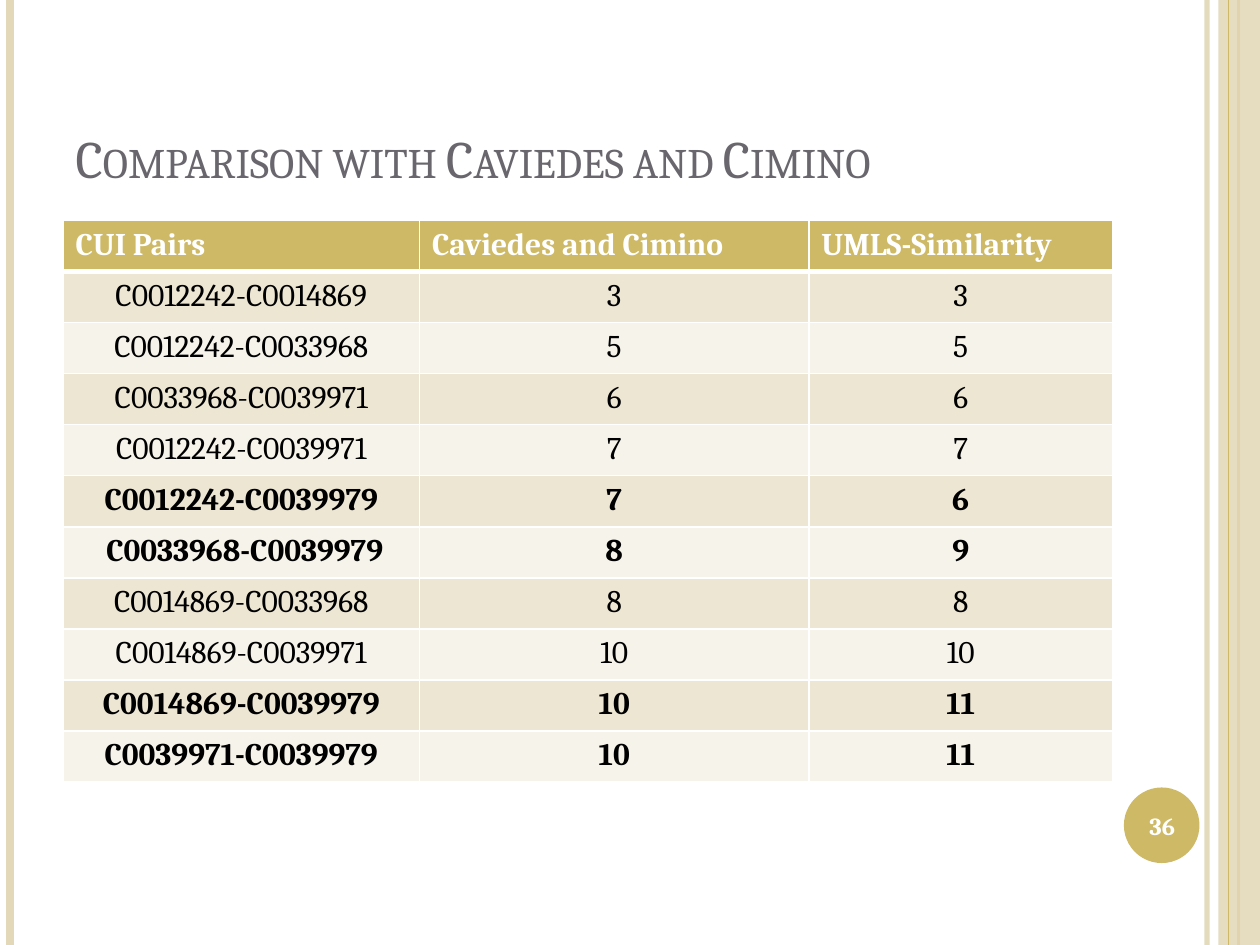
from dataclasses import dataclass

from lxml import etree
from pptx import Presentation
from pptx.dml.color import RGBColor
from pptx.enum.shapes import MSO_CONNECTOR, MSO_SHAPE
from pptx.enum.text import MSO_ANCHOR, MSO_AUTO_SIZE, PP_ALIGN
from pptx.oxml.ns import qn
from pptx.util import Inches, Pt

STRAIGHT = MSO_CONNECTOR.STRAIGHT
RECT, OVAL = MSO_SHAPE.RECTANGLE, MSO_SHAPE.OVAL
LEFT, CENTER = PP_ALIGN.LEFT, PP_ALIGN.CENTER
MIDDLE, BOTTOM = MSO_ANCHOR.MIDDLE, MSO_ANCHOR.BOTTOM

FONT = "Cambria"
GOLD, SAND, GREY, WHITE, BLACK = "CEB966", "E3D9B8", "69676D", "FFFFFF", "000000"
BANDS = ("EDE6D3", "F6F3EA")
SLIDE_H = 7.5


@dataclass
class Rule:
    """Vertical line over the full slide height."""
    x: float
    width: float
    color: str
    opacity: int = 100


@dataclass
class Pair:
    """Path length of a concept pair according to both systems."""
    name: str
    caviedes: int
    umls: int


BACK_RULES = [Rule(9.58, 3, SAND, 93), Rule(0.08, 4.5, SAND), Rule(9.83, 1.5, GOLD)]
FRONT_RULE = Rule(9.75, 0.75, GOLD)
HEADERS = ("CUI Pairs", "Caviedes and Cimino", "UMLS-Similarity")
COL_WIDTHS = (2.83, 3.09, 2.41)
ROW_HEIGHT = 4.46 / 11
PAIRS = [
    Pair("C0012242-C0014869", 3, 3),
    Pair("C0012242-C0033968", 5, 5),
    Pair("C0033968-C0039971", 6, 6),
    Pair("C0012242-C0039971", 7, 7),
    Pair("C0012242-C0039979", 7, 6),
    Pair(" C0033968-C0039979", 8, 9),
    Pair("C0014869-C0033968", 8, 8),
    Pair("C0014869-C0039971", 10, 10),
    Pair("C0014869-C0039979", 10, 11),
    Pair("C0039971-C0039979", 10, 11),
]


def rgb(color: str) -> RGBColor:
    return RGBColor.from_string(color)


def set_opacity(fill, percent: int) -> None:
    """Add an alpha value to a solid fill's colour element."""
    color = fill._xPr.find(qn("a:solidFill"))[0]
    etree.SubElement(color, qn("a:alpha"), val=str(percent * 1000))


def write(tf, text: str, align, **font) -> None:
    p = tf.paragraphs[0]
    p.alignment = align
    r = p.add_run()
    r.text = text
    r.font.color.rgb = rgb(font.pop("color"))
    for name, value in {"name": FONT, **font}.items():
        setattr(r.font, name, value)


def add_rule(s, rule: Rule) -> None:
    line = s.shapes.add_connector(
        STRAIGHT, Inches(rule.x), 0, Inches(rule.x), Inches(SLIDE_H))
    line.line.width = Pt(rule.width)
    line.line.color.rgb = rgb(rule.color)
    if rule.opacity < 100:
        set_opacity(line.line.fill, rule.opacity)
    etree.SubElement(line._element.spPr, qn("a:effectLst"))


def add_block(s, kind, box: tuple, color: str):
    sp = s.shapes.add_shape(kind, *map(Inches, box))
    sp.shadow.inherit = False
    sp.fill.solid()
    sp.fill.fore_color.rgb = rgb(color)
    sp.line.fill.background()
    return sp


def set_borders(cell, bottom: float) -> None:
    """White borders, one point wide except for the bottom one."""
    tc_pr = cell._tc.get_or_add_tcPr()
    widths = {"a:lnL": 1, "a:lnR": 1, "a:lnT": 1, "a:lnB": bottom}
    for i, (tag, width) in enumerate(widths.items()):
        ln = etree.Element(qn(tag), w=str(Pt(width)))
        fill = etree.SubElement(ln, qn("a:solidFill"))
        etree.SubElement(fill, qn("a:srgbClr"), val=WHITE)
        tc_pr.insert(i, ln)


def add_row(table, row: int, values: tuple, fill: str, align,
            bottom: float = 1, **font) -> None:
    table.rows[row].height = Inches(ROW_HEIGHT)
    for col, value in enumerate(values):
        cell = table.cell(row, col)
        cell.fill.solid()
        cell.fill.fore_color.rgb = rgb(fill)
        set_borders(cell, bottom)
        write(cell.text_frame, str(value), align, size=Pt(18), **font)


def main() -> None:
    prs = Presentation()
    prs.slide_width, prs.slide_height = Inches(10), Inches(SLIDE_H)
    s = prs.slides.add_slide(prs.slide_layouts[5])

    # Side decoration
    for rule in BACK_RULES:
        add_rule(s, rule)
    band = add_block(s, RECT, (9.67, 0, 0.33, SLIDE_H), SAND)
    set_opacity(band.fill, 87)
    add_rule(s, FRONT_RULE)
    add_block(s, OVAL, (8.92, 6.25, 0.6, 0.6), GOLD)

    # Title in small caps
    title = s.shapes.title
    box = dict(left=0.5, top=0.3, width=8.17, height=1.25)
    for name, value in box.items():
        setattr(title, name, Inches(value))
    tf = title.text_frame
    tf.auto_size = MSO_AUTO_SIZE.NONE
    tf.vertical_anchor = BOTTOM
    write(tf, "Comparison with Caviedes and Cimino", LEFT, size=Pt(30), color=GREY)
    tf.paragraphs[0].runs[0].font._element.set("cap", "small")

    # Comparison table: pairs on which the systems differ are bold
    table = s.shapes.add_table(
        len(PAIRS) + 1, len(HEADERS), Inches(0.5), Inches(1.75),
        Inches(sum(COL_WIDTHS)), Inches(ROW_HEIGHT * (len(PAIRS) + 1))).table
    for column, width in zip(table.columns, COL_WIDTHS):
        column.width = Inches(width)
    add_row(table, 0, HEADERS, GOLD, LEFT, bottom=3, color=WHITE, bold=True)
    for i, pair in enumerate(PAIRS):
        add_row(table, i + 1, (pair.name, pair.caviedes, pair.umls), BANDS[i % 2],
                CENTER, color=BLACK, bold=pair.caviedes != pair.umls)

    # Slide number
    number = s.shapes.add_textbox(*map(Inches, (8.89, 6.27, 0.67, 0.57)))
    tf = number.text_frame
    tf.word_wrap = True
    tf.vertical_anchor = MIDDLE
    write(tf, "36", CENTER, size=Pt(14), color=WHITE, bold=True)

    prs.save("out.pptx")


if __name__ == "__main__":
    main()
